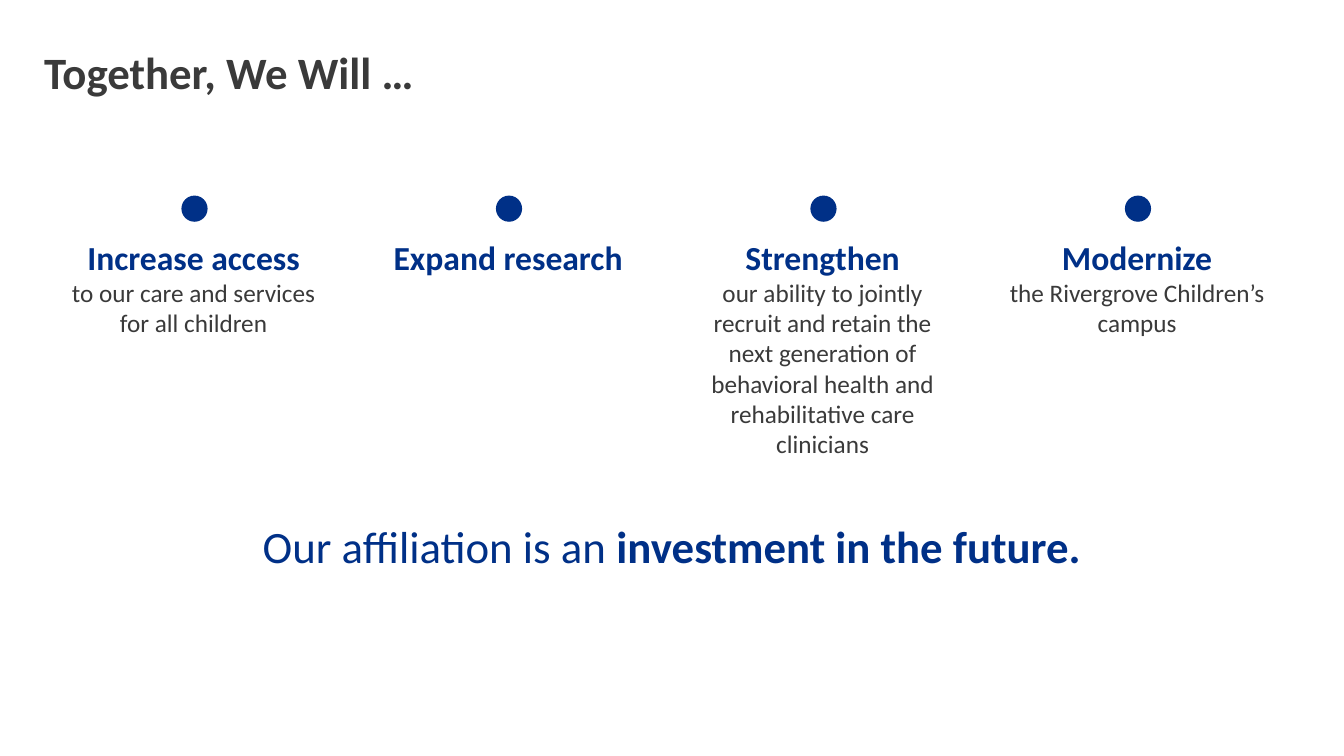
from pptx import Presentation
from pptx.dml.color import RGBColor
from pptx.enum.shapes import MSO_SHAPE
from pptx.enum.text import MSO_ANCHOR, MSO_AUTO_SIZE, PP_ALIGN
from pptx.util import Inches, Pt

BLUE = RGBColor(0x00, 0x30, 0x87)
GRAY = RGBColor(0x3A, 0x3A, 0x3A)
WHITE = RGBColor(0xFF, 0xFF, 0xFF)

COLUMN_PITCH = 23.4
COMMITMENTS = [
    ("Increase access", "to our care and services for all children", 14.8),
    ("Expand research", None, 6.67),
    (
        "Strengthen",
        "our ability to jointly recruit and retain the next generation of "
        "behavioral health and rehabilitative care clinicians",
        36.4,
    ),
    ("Modernize", "the Rivergrove Children’s campus", 14.8),
]


class PageBuilder:
    font_name = "Calibri"

    def __init__(self, deck):
        self.page = deck.slides.add_slide(deck.slide_layouts[6])
        self.page.background.fill.solid()
        self.page.background.fill.fore_color.rgb = WHITE
        self.column = deck.slide_width / 100
        self.row = deck.slide_height / 100

    def place(self, left, top, width, height):
        return (
            round(left * self.column),
            round(top * self.row),
            round(width * self.column),
            round(height * self.row),
        )

    def text(self, area, paragraphs, align=PP_ALIGN.CENTER):
        box = self.page.shapes.add_textbox(*self.place(*area))
        frame = box.text_frame
        frame.word_wrap = True
        frame.auto_size = MSO_AUTO_SIZE.SHAPE_TO_FIT_TEXT
        for index, spans in enumerate(paragraphs):
            para = frame.paragraphs[0] if index == 0 else frame.add_paragraph()
            para.alignment = align
            for words, size, color, bold in spans:
                span = para.add_run()
                span.text = words
                span.font.name = self.font_name
                span.font.size = Pt(size)
                span.font.color.rgb = color
                span.font.bold = bold
        return frame

    def title(self, area, words):
        frame = self.text(area, [[(words, 32, GRAY, True)]], PP_ALIGN.LEFT)
        frame.auto_size = MSO_AUTO_SIZE.NONE
        frame.vertical_anchor = MSO_ANCHOR.MIDDLE
        frame.paragraphs[0].line_spacing = 0.9

    def dot(self, area):
        circle = self.page.shapes.add_shape(MSO_SHAPE.OVAL, *self.place(*area))
        circle.shadow.inherit = False
        circle.fill.solid()
        circle.fill.fore_color.rgb = BLUE
        circle.line.fill.background()

    def commitment(self, index, heading, detail, height):
        offset = index * COLUMN_PITCH
        paragraphs = [[(heading, 24, BLUE, True)]]
        if detail:
            paragraphs.append([(detail, 18, GRAY, False)])
        self.text((3.83 + offset, 30.67, 21.15, height), paragraphs)
        self.dot((13.5 + offset, 25.87, 1.95, 3.47))


def main():
    deck = Presentation()
    deck.slide_width = Inches(13.33)
    deck.slide_height = Inches(7.5)
    builder = PageBuilder(deck)
    builder.title((2.55, 5.33, 45.4, 9.2), "Together, We Will …")
    for index, (heading, detail, height) in enumerate(COMMITMENTS):
        builder.commitment(index, heading, detail, height)
    closing = [
        ("Our affiliation is an ", 32, BLUE, False),
        ("investment in the future.", 32, BLUE, True),
    ]
    builder.text((0, 68, 100, 8.53), [closing])
    deck.save("out.pptx")


if __name__ == "__main__":
    main()
